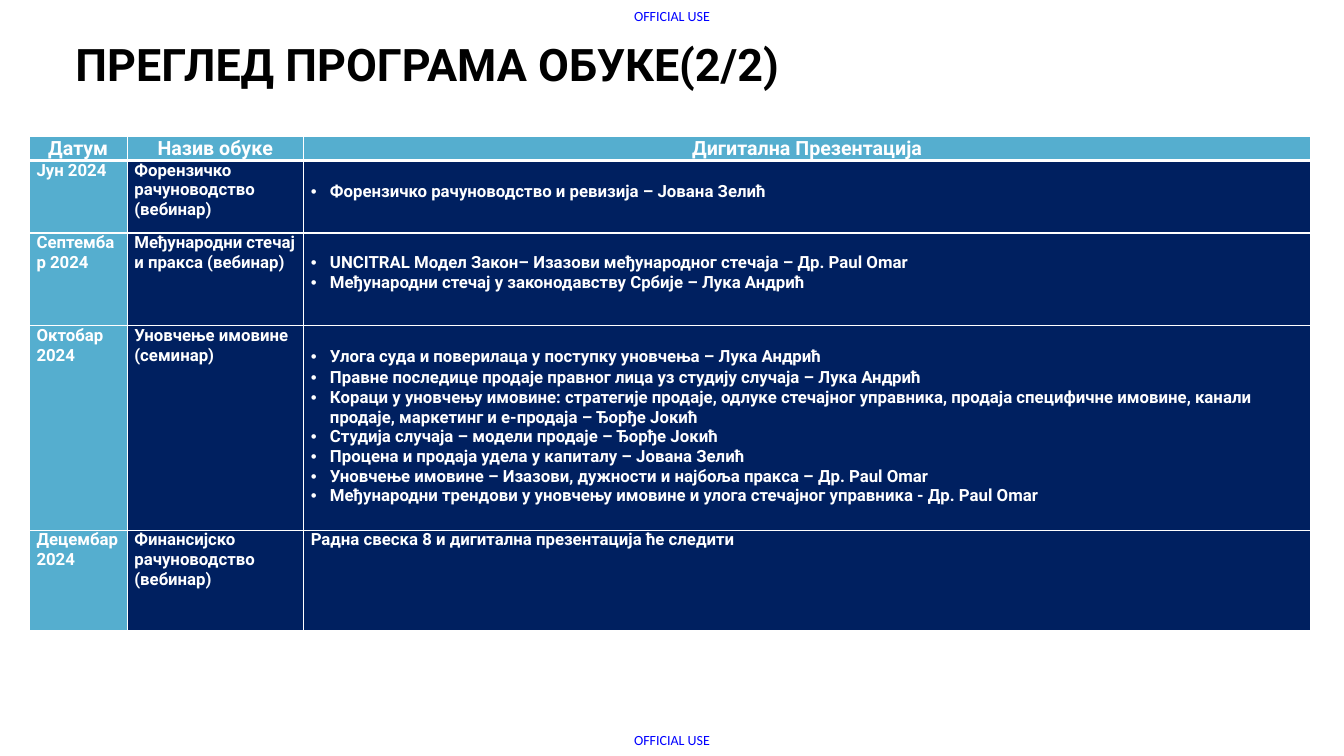
from dataclasses import dataclass

from lxml.etree import SubElement
from pptx import Presentation
from pptx.dml.color import RGBColor
from pptx.enum.text import MSO_ANCHOR, PP_ALIGN
from pptx.oxml.ns import qn
from pptx.util import Emu, Inches, Pt

SLIDE_WIDTH, SLIDE_HEIGHT = Inches(13.33), Inches(7.5)


@dataclass(frozen=True)
class TextStyle:
    font: str
    size: int
    color: str
    bold: bool = True


@dataclass(frozen=True)
class Theme:
    title: TextStyle = TextStyle("Roboto", 32, "000000")
    header: TextStyle = TextStyle("Roboto", 14, "FFFFFF")
    body: TextStyle = TextStyle("Roboto", 12, "FFFFFF")
    label: TextStyle = TextStyle("Calibri", 10, "0000FF", False)
    light_fill: str = "55AECF"
    dark_fill: str = "002060"
    border: str = "FFFFFF"
    thin: int = 1
    thick: int = 3


@dataclass(frozen=True)
class Area:
    """Left, top, width and height in percent of the slide."""
    left: float
    top: float
    width: float
    height: float


@dataclass(frozen=True)
class Topic:
    text: str
    spacing: float = 1.0
    bullet: bool = True


@dataclass(frozen=True)
class Training:
    date: str
    name: str
    topics: tuple[Topic, ...]
    height: float


THEME = Theme()
COLUMNS = (7.28, 13.13, 74.94)
HEADER_HEIGHT = 3.07
TABLE_LEFT, TABLE_TOP = 2.18, 18.1
HEADER_INSET, BODY_INSET = 0.15, 0.54
BULLET_INDENT = 1.43
BULLETS_TOP = 2.65
LABEL_TOPS = (0.95, 96.8)
HEADERS = ("Датум", "Назив обуке", "Дигитална Презентација")
TRAININGS = (
    Training("Јун 2024", "Форензичко рачуноводство (вебинар)", (
        Topic("Форензичко рачуноводство и ревизија – Јована Зелић", 1.07),
    ), 9.6),
    Training("Септембар 2024", "Међународни стечај и пракса (вебинар)", (
        Topic("UNCITRAL Модел Закон– Изазови међународног стечаја – Др. Paul Omar"),
        Topic("Међународни стечај у законодавству Србије – Лука Андрић"),
    ), 12.27),
    Training("Октобар 2024", "Уновчење имовине (семинар)", (
        Topic("Улога суда и поверилаца у поступку уновчења – Лука Андрић", 1.07),
        Topic("Правне последице продаје правног лица уз студију случаја – Лука Андрић", 1.07),
        Topic("Кораци у уновчењу имовине: стратегије продаје, одлуке стечајног управника, "
              "продаја специфичне имовине, канали продаје, маркетинг и е-продаја – Ђорђе Јокић"),
        Topic("Студија случаја – модели продаје – Ђорђе Јокић"),
        Topic("Процена и продаја удела у капиталу – Јована Зелић"),
        Topic("Уновчење имовине – Изазови, дужности и најбоља пракса – Др. Paul Omar"),
        Topic("Међународни трендови у уновчењу имовине и улога стечајног управника - Др. Paul Omar"),
    ), 27.07),
    Training("Децембар 2024", "Финансијско рачуноводство (вебинар)", (
        Topic("Радна свеска 8 и дигитална презентација ће следити", bullet=False),
    ), 13.33),
)


def across(percent: float) -> Emu:
    return Emu(round(SLIDE_WIDTH * percent / 100))


def down(percent: float) -> Emu:
    return Emu(round(SLIDE_HEIGHT * percent / 100))


def place(area: Area) -> tuple[Emu, Emu, Emu, Emu]:
    return across(area.left), down(area.top), across(area.width), down(area.height)


def write(para, text: str, style: TextStyle, align=PP_ALIGN.LEFT) -> None:
    para.text = text
    para.alignment = align
    para.font.name = style.font
    para.font.size = Pt(style.size)
    para.font.bold = style.bold
    para.font.color.rgb = RGBColor.from_string(style.color)


def add_bullet(para) -> None:
    properties = para._p.get_or_add_pPr()
    properties.set("marL", str(across(BULLET_INDENT)))
    properties.set("indent", str(-across(BULLET_INDENT)))
    SubElement(properties, qn("a:buFont"), typeface="Arial")
    SubElement(properties, qn("a:buChar"), char="•")


def add_label(page, top: float) -> None:
    box = page.shapes.add_textbox(*place(Area(47, top, 6, 2.25)))
    frame = box.text_frame
    frame.margin_left = frame.margin_right = frame.margin_top = frame.margin_bottom = 0
    frame.word_wrap = True
    write(frame.paragraphs[0], "OFFICIAL USE", THEME.label, PP_ALIGN.CENTER)


def add_title(page) -> None:
    frame = page.shapes.add_textbox(*place(Area(4.88, 5.2, 94.07, 7.2))).text_frame
    frame.word_wrap = True
    frame.vertical_anchor = MSO_ANCHOR.MIDDLE
    frame.paragraphs[0].line_spacing = 0.9
    write(frame.paragraphs[0], "ПРЕГЛЕД ПРОГРАМА ОБУКЕ(2/2)", THEME.title)


def style_cell(cell, fill: str, inset: float, top_line: int, bottom_line: int) -> None:
    """Set margins, then borders, then fill, in the order the file format needs."""
    cell.margin_left = cell.margin_right = across(inset)
    cell.margin_top = cell.margin_bottom = 0
    sides = {"lnL": THEME.thin, "lnR": THEME.thin, "lnT": top_line, "lnB": bottom_line}
    for side, points in sides.items():
        line = SubElement(cell._tc.get_or_add_tcPr(), qn(f"a:{side}"), w=str(Pt(points)))
        SubElement(SubElement(line, qn("a:solidFill")), qn("a:srgbClr"), val=THEME.border)
    cell.fill.solid()
    cell.fill.fore_color.rgb = RGBColor.from_string(fill)


def write_topics(cell, topics: tuple[Topic, ...]) -> None:
    frame = cell.text_frame
    if topics[0].bullet:
        cell.margin_top = down(BULLETS_TOP)
    for index, topic in enumerate(topics):
        para = frame.add_paragraph() if index else frame.paragraphs[0]
        para.line_spacing = topic.spacing
        if topic.bullet:
            add_bullet(para)
        write(para, topic.text, THEME.body)


def add_training_table(page) -> None:
    heights = (HEADER_HEIGHT, *(training.height for training in TRAININGS))
    area = Area(TABLE_LEFT, TABLE_TOP, sum(COLUMNS), sum(heights))
    table = page.shapes.add_table(len(heights), len(COLUMNS), *place(area)).table
    table.first_row = table.horz_banding = False
    for column, width in zip(table.columns, COLUMNS):
        column.width = across(width)
    for row, height in zip(table.rows, heights):
        row.height = down(height)
    for column, header in enumerate(HEADERS):
        cell = table.cell(0, column)
        style_cell(cell, THEME.light_fill, HEADER_INSET, THEME.thin, THEME.thick)
        write(cell.text_frame.paragraphs[0], header, THEME.header, PP_ALIGN.CENTER)
    for row, training in enumerate(TRAININGS, start=1):
        top_line = THEME.thick if row == 1 else THEME.thin
        for column in range(len(COLUMNS)):
            fill = THEME.dark_fill if column else THEME.light_fill
            style_cell(table.cell(row, column), fill, BODY_INSET, top_line, THEME.thin)
        for column, text in enumerate((training.date, training.name)):
            write(table.cell(row, column).text_frame.paragraphs[0], text, THEME.body)
        write_topics(table.cell(row, 2), training.topics)


def main() -> None:
    deck = Presentation()
    deck.slide_width, deck.slide_height = SLIDE_WIDTH, SLIDE_HEIGHT
    page = deck.slides.add_slide(deck.slide_layouts[6])
    for top in LABEL_TOPS:
        add_label(page, top)
    add_title(page)
    add_training_table(page)
    deck.save("out.pptx")


if __name__ == "__main__":
    main()
